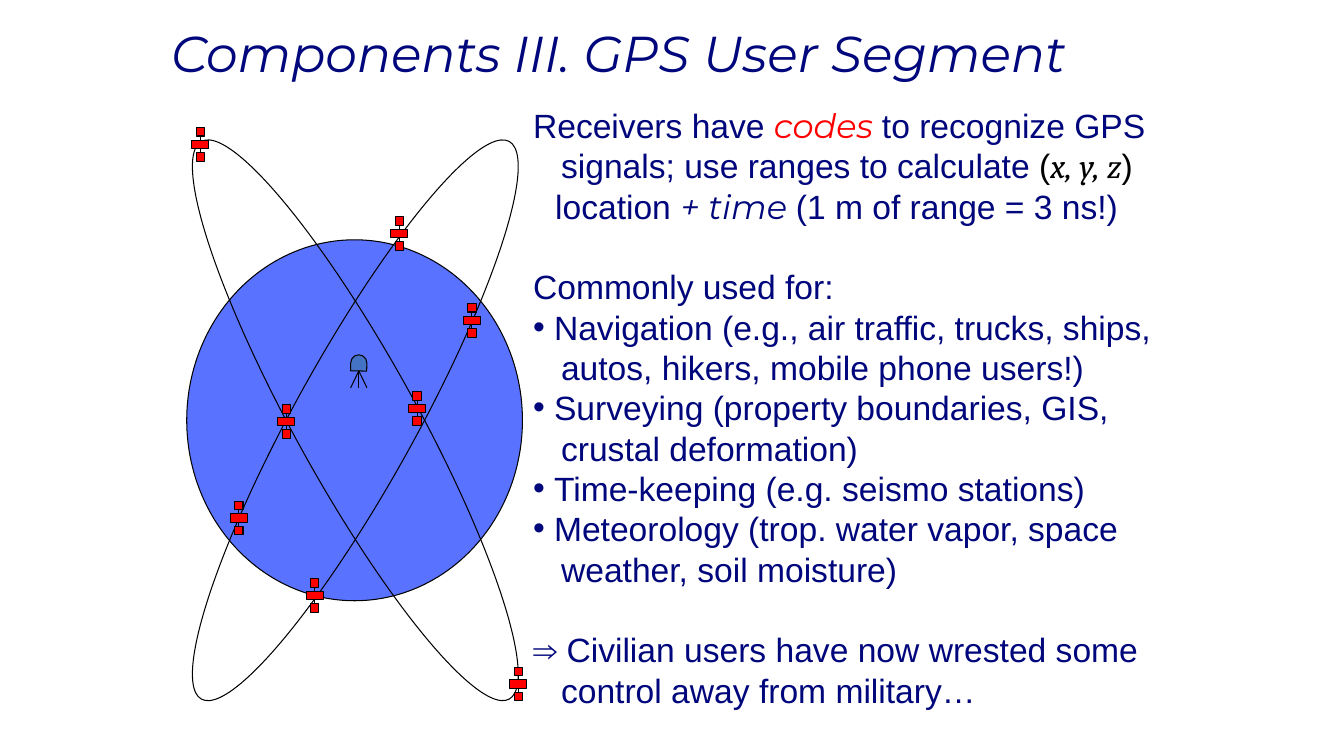
from lxml import etree
from pptx import Presentation
from pptx.dml.color import RGBColor
from pptx.enum.shapes import MSO_CONNECTOR, MSO_SHAPE
from pptx.oxml.ns import qn
from pptx.util import Pt

RECTANGLE = MSO_SHAPE.RECTANGLE
OVAL = MSO_SHAPE.OVAL
DELAY = MSO_SHAPE.FLOWCHART_DELAY
STRAIGHT = MSO_CONNECTOR.STRAIGHT

COLORS = {
    "navy": "00067B",
    "red": "FF0000",
    "black": "000000",
    "earth": "5972FF",
    "receiver": "4472C4",
}

PLAIN = ("Arial", "navy", False)
TITLE = ("Montserrat", "navy", True)
CODES = ("Montserrat", "red", True)
PAREN = ("Arial", "black", False)
COORDINATES = ("Cambria", "black", True)

HEADING = "Components III. GPS User Segment"
FLUSH, BULLET, CONTINUED, NARROW = "flush", "bullet", "continued", "narrow"
INDENTS = {FLUSH: 0, BULLET: 15, CONTINUED: 20, NARROW: 15.8}
LINE_PITCH = 28.8

LINES = [
    (FLUSH, 0, [("Receivers have ", PLAIN), ("codes ", CODES), ("to recognize GPS", PLAIN)]),
    (CONTINUED, 0, [("signals; use ranges to calculate ", PLAIN), ("(", PAREN),
                    ("x, y, z", COORDINATES), (")", PAREN)]),
    (NARROW, 0, [("location ", PLAIN), ("+ time ", TITLE), ("(1 m of range = 3 ns!)", PLAIN)]),
    (FLUSH, 1, [("Commonly used for:", PLAIN)]),
    (BULLET, 0, [("Navigation (e.g., air traffic, trucks, ships,", PLAIN)]),
    (CONTINUED, 0, [("autos, hikers, mobile phone users!)", PLAIN)]),
    (BULLET, 0, [("Surveying (property boundaries, GIS,", PLAIN)]),
    (CONTINUED, 0, [("crustal deformation)", PLAIN)]),
    (BULLET, 0, [("Time-keeping (e.g. seismo stations)", PLAIN)]),
    (BULLET, 0, [("Meteorology (trop. water vapor, space", PLAIN)]),
    (CONTINUED, 0, [("weather, soil moisture)", PLAIN)]),
    (FLUSH, 1, [("⇒ Civilian users have now wrested some", PLAIN)]),
    (CONTINUED, 0, [("control away from military…", PLAIN)]),
]

EARTH = (253.3, 300.2, 239.8, 257.8)
ORBIT = (253.8, 300.2, 87.1, 455)
ORBIT_TILT = 28.9
SATELLITES = [
    (143.2, 103.2), (204.6, 301.1), (298, 291.8), (370.2, 488.5),
    (285.2, 166.8), (337.1, 228.9), (224.8, 425.4), (170.6, 370),
]
BODY_WIDTH, PANEL_SIZE, PANEL_OFFSET = 12.2, 6, 9
RECEIVER = (256.3, 259.2)
RECEIVER_SIZE, LEG_HEIGHT, LEG_SPREAD = 11.5, 12, 5.8


def color(name):
    return RGBColor.from_string(COLORS[name])


def add_box(page, left, top, width, height):
    box = page.shapes.add_textbox(Pt(left), Pt(top), Pt(width), Pt(height))
    box.text_frame.word_wrap = True
    return box.text_frame


def add_span(para, text, style, size):
    span = para.add_run()
    span.text = text
    font = span.font
    font.name, font.italic = style[0], style[2]
    font.color.rgb = color(style[1])
    font.size = Pt(size)


def add_line_of_text(para, kind, blank_lines, spans):
    para.line_spacing = Pt(LINE_PITCH)
    para.space_before = Pt(blank_lines * LINE_PITCH)
    properties = para._p.get_or_add_pPr()
    properties.set("marL", str(Pt(INDENTS[kind])))
    if kind == BULLET:
        properties.set("indent", str(-Pt(INDENTS[kind])))
        etree.SubElement(properties, qn("a:buFont"), typeface="Arial")
        etree.SubElement(properties, qn("a:buChar"), char="•")
    for text, style in spans:
        add_span(para, text, style, 24)


def add_centered(shapes, kind, x, y, width, height, fill=None, rotation=0):
    shape = shapes.add_shape(kind, Pt(x - width / 2), Pt(y - height / 2), Pt(width), Pt(height))
    shape.shadow.inherit = False
    shape.rotation = rotation
    if fill:
        shape.fill.solid()
        shape.fill.fore_color.rgb = color(fill)
    else:
        shape.fill.background()
    shape.line.color.rgb = color("black")
    shape.line.width = Pt(0.75)


def add_stroke(shapes, x1, y1, x2, y2):
    stroke = shapes.add_connector(STRAIGHT, Pt(x1), Pt(y1), Pt(x2), Pt(y2))
    stroke.line.color.rgb = color("black")
    stroke.line.width = Pt(0.75)
    etree.SubElement(stroke._element.spPr, qn("a:effectLst"))


def add_satellite(shapes, x, y):
    reach = PANEL_OFFSET - PANEL_SIZE / 2
    add_stroke(shapes, x, y - reach, x, y + reach)
    add_centered(shapes, RECTANGLE, x, y, BODY_WIDTH, PANEL_SIZE, "red")
    for offset in (-PANEL_OFFSET, PANEL_OFFSET):
        add_centered(shapes, RECTANGLE, x, y + offset, PANEL_SIZE, PANEL_SIZE, "red")


def add_receiver(shapes, x, y):
    add_centered(shapes, DELAY, x, y, RECEIVER_SIZE, RECEIVER_SIZE, "receiver", 271.1)
    top = y + RECEIVER_SIZE / 2
    for spread in (LEG_SPREAD, -LEG_SPREAD, 0):
        add_stroke(shapes, x, top, x + spread, top + LEG_HEIGHT)


def main():
    deck = Presentation()
    deck.slide_width, deck.slide_height = Pt(960), Pt(540)
    page = deck.slides.add_slide(deck.slide_layouts[6])

    title = add_box(page, 115.2, 12.2, 720, 51.1)
    add_span(title.paragraphs[0], HEADING, TITLE, 36)

    body = add_box(page, 373.7, 71.5, 470.9, 443.5)
    for index, line in enumerate(LINES):
        para = body.add_paragraph() if index else body.paragraphs[0]
        add_line_of_text(para, *line)

    diagram = page.shapes.add_group_shape().shapes
    add_centered(diagram, OVAL, *EARTH, fill="earth")
    for tilt in (-ORBIT_TILT, ORBIT_TILT):
        add_centered(diagram, OVAL, *ORBIT, rotation=tilt)
    for x, y in SATELLITES:
        add_satellite(diagram, x, y)
    add_receiver(diagram, *RECEIVER)

    deck.save("out.pptx")


if __name__ == "__main__":
    main()
